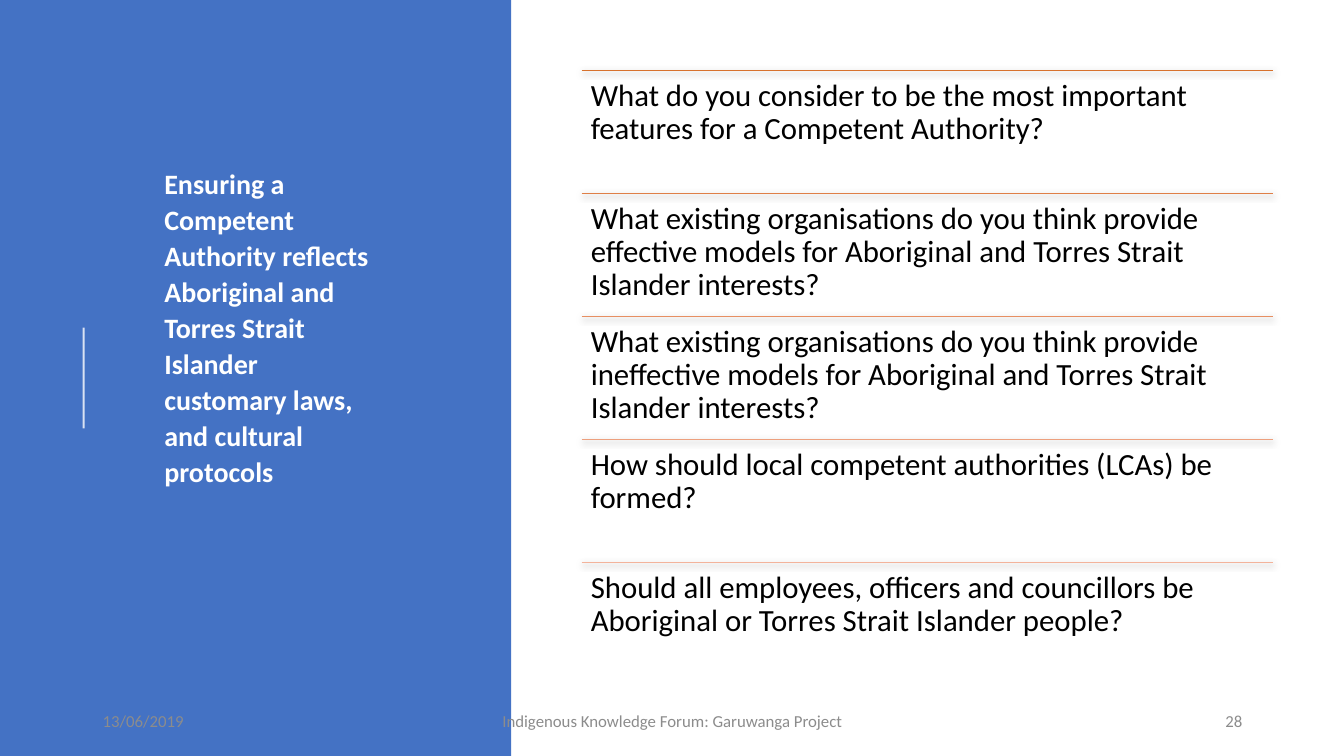
from lxml import etree
from pptx import Presentation
from pptx.dml.color import RGBColor
from pptx.enum.shapes import MSO_CONNECTOR as Connector, MSO_SHAPE as Shape
from pptx.enum.text import MSO_ANCHOR as Anchor, MSO_AUTO_SIZE as AutoSize, PP_ALIGN as Align
from pptx.oxml.ns import qn
from pptx.util import Inches, Pt

BLUE = RGBColor(0x44, 0x72, 0xC4)
WHITE = RGBColor(0xFF, 0xFF, 0xFF)
BLACK = RGBColor(0x00, 0x00, 0x00)
GREY = RGBColor(0x8C, 0x8C, 0x8C)
RULE_COLOURS = [
    RGBColor(0xD7, 0x71, 0x2C),
    RGBColor(0xDF, 0x7F, 0x47),
    RGBColor(0xE7, 0x8F, 0x62),
    RGBColor(0xED, 0xA0, 0x7E),
    RGBColor(0xF3, 0xB3, 0x9B),
]
QUESTIONS = [
    "What do you consider to be the most important features for a Competent Authority?",
    "What existing organisations do you think provide effective models for "
    "Aboriginal and Torres Strait Islander interests?",
    "What existing organisations do you think provide ineffective models for "
    "Aboriginal and Torres Strait Islander interests?",
    "How should local competent authorities (LCAs) be formed?",
    "Should all employees, officers and councillors be Aboriginal or Torres Strait "
    "Islander people?",
]

deck = Presentation()
deck.slide_width, deck.slide_height = Inches(13.33), Inches(7.5)
page = deck.slides.add_slide(deck.slide_layouts[5])
shapes = page.shapes


def write(box, text, size, colour, bold=False, align=Align.LEFT, anchor=Anchor.TOP,
          spacing=1.0, inset=None):
    frame = box.text_frame
    frame.word_wrap = True
    frame.vertical_anchor = anchor
    if inset is not None:
        frame.margin_left = frame.margin_right = Inches(inset)
        frame.margin_top = frame.margin_bottom = Inches(inset)
    para = frame.paragraphs[0]
    para.alignment = align
    para.line_spacing = spacing
    span = para.add_run()
    span.text = text
    span.font.name = "Calibri"
    span.font.size = Pt(size)
    span.font.bold = bold
    span.font.color.rgb = colour
    return para


def add_rule(start, end, colour, width):
    """Draw a straight line; return it with its empty effect list."""
    rule = shapes.add_connector(Connector.STRAIGHT, *map(Inches, start + end))
    rule.line.color.rgb = colour
    rule.line.width = Pt(width)
    effects = etree.SubElement(rule._element.spPr, qn("a:effectLst"))
    return rule, effects


# Blue side panel, placed behind the title
panel = shapes.add_shape(Shape.RECTANGLE, 0, 0, Inches(5.07), deck.slide_height)
panel.shadow.inherit = False
panel.fill.solid()
panel.fill.fore_color.rgb = BLUE
panel.line.fill.background()
shapes.title._element.addprevious(panel._element)

# Translucent accent line beside the title
accent, _ = add_rule((0.83, 4.25), (0.83, 3.25), WHITE, 1.5)
accent_colour = next(accent._element.iter(qn("a:srgbClr")))
etree.SubElement(accent_colour, qn("a:alpha"), val="80000")

# Title
title = shapes.title
title.left, title.top = Inches(1.03), Inches(1.58)
title.width, title.height = Inches(2.89), Inches(3.33)
title_para = write(
    title,
    "Ensuring a Competent Authority reflects Aboriginal and Torres Strait Islander "
    "customary laws, and cultural protocols",
    20, WHITE, bold=True, spacing=1.07)
title.text_frame.auto_size = AutoSize.SHAPE_TO_FIT_TEXT
title_para._p.get_or_add_pPr().set("marL", str(Inches(0.5)))

# Questions, each under a shadowed rule
LEFT, TOP, WIDTH, STEP = 5.77, 0.7, 6.86, 1.22
for row, (question, colour) in enumerate(zip(QUESTIONS, RULE_COLOURS)):
    y = TOP + row * STEP
    _, effects = add_rule((LEFT, y), (LEFT + WIDTH, y), colour, 0.5)
    shadow = etree.SubElement(
        effects, qn("a:outerShdw"), blurRad=str(Pt(4.5)), dist=str(Pt(1.5)),
        dir="5400000", algn="ctr", rotWithShape="0")
    shadow_colour = etree.SubElement(shadow, qn("a:srgbClr"), val="000000")
    etree.SubElement(shadow_colour, qn("a:alpha"), val="63000")
    box = shapes.add_textbox(*map(Inches, (LEFT, y, WIDTH, STEP)))
    write(box, question, 22, BLACK, spacing=0.9, inset=0.09)

# Date, footer and page number
for text, left, width, align in [
    ("13/06/2019", 0.92, 3, Align.LEFT),
    ("Indigenous Knowledge Forum: Garuwanga Project", 4.42, 4.5, Align.CENTER),
    ("28", 9.42, 3, Align.RIGHT),
]:
    box = shapes.add_textbox(*map(Inches, (left, 6.95, width, 0.4)))
    write(box, text, 12, GREY, align=align, anchor=Anchor.MIDDLE)

deck.save("out.pptx")
